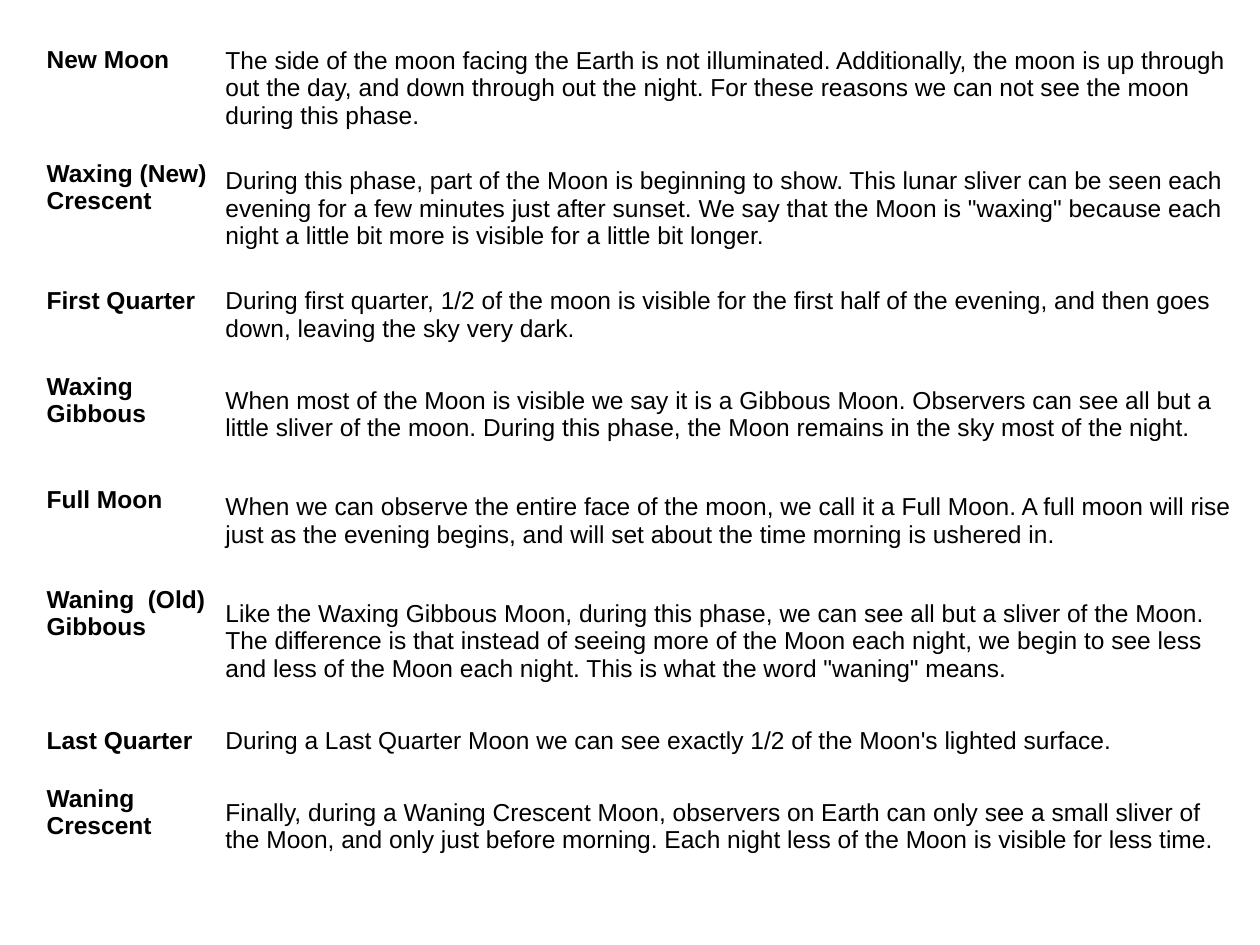
from lxml import etree
from pptx import Presentation
from pptx import util as u
from pptx.dml.color import RGBColor
from pptx.enum import text
from pptx.oxml import ns

BLACK = RGBColor(0, 0, 0)

PHASES = [
    (0.90, ["New Moon"],
     "The side of the moon facing the Earth is not illuminated. Additionally, the moon is up through "
     "out the day, and down through out the night. For these reasons we can not see the moon "
     "during this phase."),
    (1.01, ["Waxing (New)", "Crescent"],
     "During this phase, part of the Moon is beginning to show. This lunar sliver can be seen each "
     "evening for a few minutes just after sunset. We say that the Moon is \"waxing\" because each "
     "night a little bit more is visible for a little bit longer."),
    (0.68, ["First Quarter"],
     "During first quarter, 1/2 of the moon is visible for the first half of the evening, and then "
     "goes down, leaving the sky very dark."),
    (0.90, ["Waxing Gibbous"],
     "When most of the Moon is visible we say it is a Gibbous Moon. Observers can see all but a "
     "little sliver of the moon. During this phase, the Moon remains in the sky most of the night."),
    (0.79, ["Full Moon"],
     "When we can observe the entire face of the moon, we call it a Full Moon. A full moon will rise "
     "just as the evening begins, and will set about the time morning is ushered in."),
    (1.12, ["Waning  (Old) Gibbous"],
     "Like the Waxing Gibbous Moon, during this phase, we can see all but a sliver of the Moon. "
     "The difference is that instead of seeing more of the Moon each night, we begin to see less "
     "and less of the Moon each night. This is what the word \"waning\" means."),
    (0.46, ["Last Quarter"],
     "During a Last Quarter Moon we can see exactly 1/2 of the Moon's lighted surface."),
    (0.90, ["Waning Crescent"],
     "Finally, during a Waning Crescent Moon, observers on Earth can only see a small sliver of "
     "the Moon, and only just before morning. Each night less of the Moon is visible for less time."),
]


class Deck:
    """Holds the text style and the current slide, measured on a one-inch grid."""

    def __init__(self, columns, rows, font="Arial", size=14):
        self.font, self.size = font, size
        self.deck = Presentation()
        self.deck.slide_width, self.deck.slide_height = u.Inches(columns), u.Inches(rows)
        self.slide = self.deck.slides.add_slide(self.deck.slide_layouts[6])

    def add_words(self, paragraph, words, bold):
        run = paragraph.add_run()
        run.text = words
        run.font.name, run.font.size, run.font.bold = self.font, u.Pt(self.size), bold
        run.font.color.rgb = BLACK

    def end_with_break(self, paragraph):
        paragraph.add_line_break()
        line_break = paragraph._p[-1]
        for parent, tag in ((line_break, "a:rPr"), (paragraph._p, "a:endParaRPr")):
            mark = etree.SubElement(parent, ns.qn(tag), sz=str(self.size * 100))
            etree.SubElement(mark, ns.qn("a:latin"), typeface=self.font)

    def cell(self, cell, lines, bold, anchor):
        cell.fill.background()
        cell.margin_left = cell.margin_right = u.Inches(0.02)
        cell.margin_top = cell.margin_bottom = u.Inches(0.01)
        cell.vertical_anchor = anchor
        frame = cell.text_frame
        for index, words in enumerate(lines):
            paragraph = frame.add_paragraph() if index else frame.paragraphs[0]
            self.add_words(paragraph, words, bold)
        return paragraph

    def glossary(self, left, top, widths, entries):
        height = sum(entry[0] for entry in entries)
        table = self.slide.shapes.add_table(
            len(entries), len(widths), u.Inches(left), u.Inches(top),
            u.Inches(sum(widths)), u.Inches(height)).table
        table.first_row = table.horz_banding = False
        for column, width in zip(table.columns, widths):
            column.width = u.Inches(width)
        for row, (row_height, term, meaning) in zip(table.rows, entries):
            row.height = u.Inches(row_height)
            self.cell(row.cells[0], term, True, text.MSO_ANCHOR.TOP)
            closing = self.cell(row.cells[1], [meaning], False, text.MSO_ANCHOR.MIDDLE)
            self.end_with_break(closing)


def main():
    moon = Deck(10, 7.5)
    moon.glossary(0.35, 0.36, (1.42, 8.03), PHASES)
    moon.deck.save("out.pptx")


if __name__ == "__main__":
    main()
